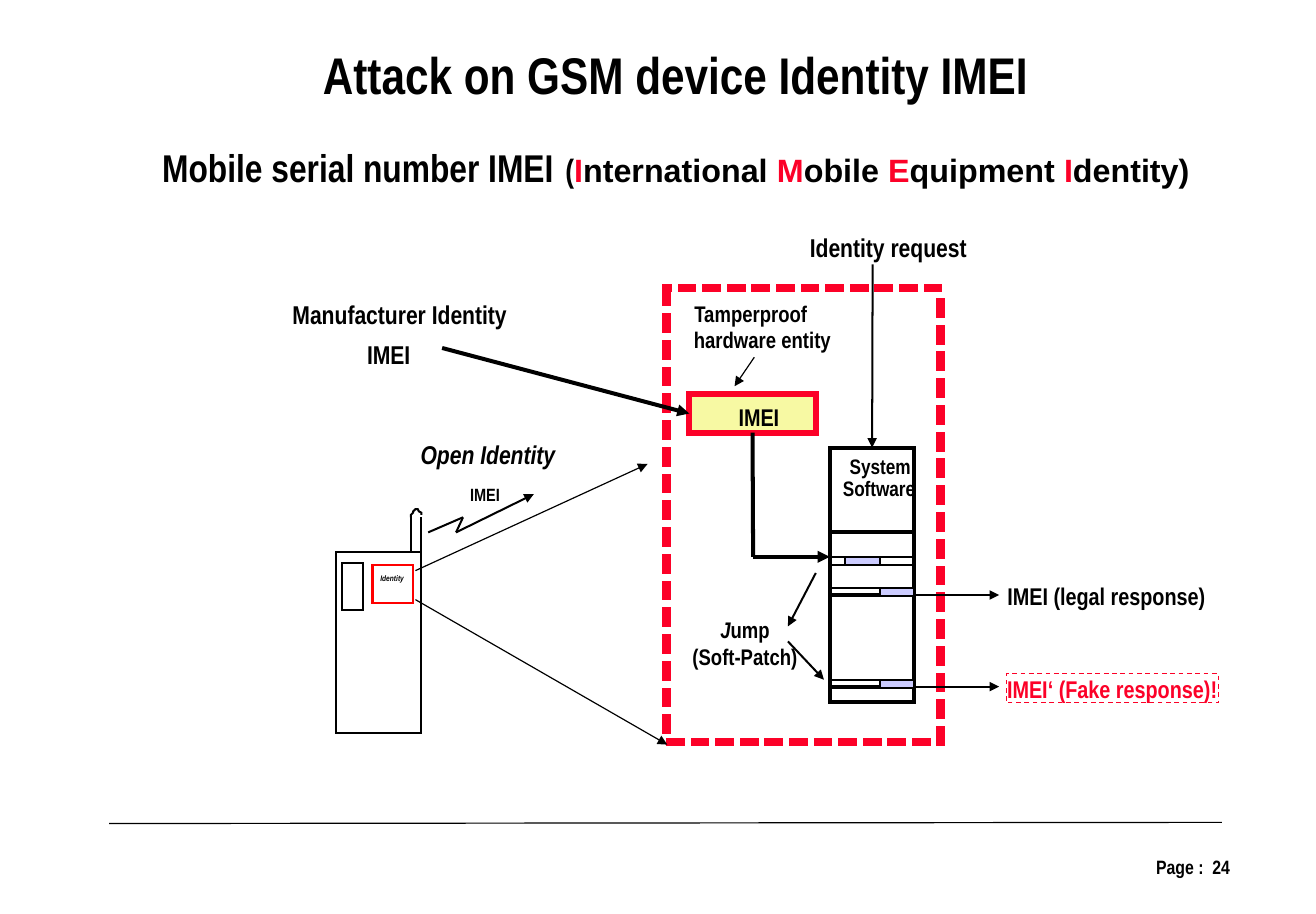
from dataclasses import dataclass
from typing import NamedTuple, Optional

from lxml.etree import SubElement
from pptx import Presentation
from pptx.dml.color import RGBColor
from pptx.enum.dml import MSO_LINE_DASH_STYLE as Dash
from pptx.enum.shapes import MSO_CONNECTOR_TYPE as Link, MSO_SHAPE as Kind
from pptx.enum.text import MSO_AUTO_SIZE as Fit, PP_ALIGN as Align
from pptx.oxml.ns import qn
from pptx.shapes.autoshape import Shape
from pptx.shapes.connector import Connector
from pptx.text.text import TextFrame
from pptx.util import Inches, Pt

BLACK, WHITE, RED = "000000", "FFFFFF", "FC0128"
PURE, YELLOW, LILAC = "FF0000", "F7F9A3", "CCCCFF"
NARROW = "Arial Narrow"

Point = tuple[float, float]


class Run(NamedTuple):
    text: str
    size: float
    color: str = BLACK
    italic: bool = False
    font: str = NARROW


class Box(NamedTuple):
    x: float
    y: float
    w: float
    h: float


@dataclass
class Label:
    box: Box
    rows: list[list[Run]]
    align: Align = Align.CENTER
    wrap: bool = False
    inset: Point = (0, 0)
    gap: float = 0


@dataclass
class Line:
    start: Point
    end: Point
    width: float = 1.25
    head: Optional[str] = None


prs = Presentation()
prs.slide_width, prs.slide_height = Inches(11.34), Inches(7.88)
slide = prs.slides.add_slide(prs.slide_layouts[6])
shapes = slide.shapes


def rgb(code: str) -> RGBColor:
    return RGBColor.from_string(code)


def paint(shape: Shape, fill: Optional[str], line: str, width: float) -> Shape:
    shape.shadow.inherit = False
    if fill:
        shape.fill.solid()
        shape.fill.fore_color.rgb = rgb(fill)
    else:
        shape.fill.background()
    shape.line.color.rgb = rgb(line)
    shape.line.width = Pt(width)
    SubElement(shape.line._get_or_add_ln(), qn("a:miter"), lim="800000")
    return shape


def add_box(box: Box, fill: Optional[str] = None, line: str = BLACK, width: float = 1.25) -> Shape:
    return paint(shapes.add_shape(Kind.RECTANGLE, *map(Inches, box)), fill, line, width)


def add_path(points: list[Point], closed: bool, fill: Optional[str], line: str, width: float) -> Shape:
    first, *rest = [(Inches(x), Inches(y)) for x, y in points]
    pen = shapes.build_freeform(*first)
    pen.add_line_segments(rest, close=closed)
    return paint(pen.convert_to_shape(), fill, line, width)


def add_line(line: Line) -> Connector:
    ends = map(Inches, (*line.start, *line.end))
    link = shapes.add_connector(Link.STRAIGHT, *ends)
    link.line.color.rgb = rgb(BLACK)
    link.line.width = Pt(line.width)
    if line.head:
        SubElement(link.line._get_or_add_ln(), qn("a:tailEnd"), type="triangle", w=line.head, len=line.head)
    SubElement(link._element.spPr, qn("a:effectLst"))
    return link


def fill_text(frame: TextFrame, label: Label) -> None:
    frame.word_wrap = label.wrap
    frame.auto_size = Fit.SHAPE_TO_FIT_TEXT
    frame.margin_left = frame.margin_right = Inches(label.inset[0])
    frame.margin_top = frame.margin_bottom = Inches(label.inset[1])
    for i, row in enumerate(label.rows):
        para = frame.add_paragraph() if i else frame.paragraphs[0]
        para.alignment = label.align
        if i and label.gap:
            para.space_before = Pt(label.gap)
        for item in row:
            run = para.add_run()
            run.text = item.text
            font = run.font
            font.name, font.size = item.font, Pt(item.size)
            font.bold, font.italic = True, item.italic
            font.color.rgb = rgb(item.color)


def add_label(label: Label) -> None:
    fill_text(shapes.add_textbox(*map(Inches, label.box)).text_frame, label)


def add_dashes(start: Point, end: Point, count: int, size: Point) -> None:
    (x0, y0), (x1, y1) = start, end
    for i in range(count):
        part = i / (count - 1)
        add_box(Box(x0 + (x1 - x0) * part, y0 + (y1 - y0) * part, *size), PURE, RED, 3)


# Footer
add_line(Line((0.94, 7.1), (10.53, 7.09), 0.75))
add_label(Label(Box(8.14, 7.31, 2.58, 0.53), [[Run("Page :  24", 12)]], Align.RIGHT, True, (0.12, 0.06)))

# Phone with antenna
add_box(Box(2.95, 4.85, 0.18, 0.41), WHITE)
add_box(Box(2.9, 4.76, 0.73, 1.56))
add_box(Box(3.21, 4.87, 0.35, 0.33), WHITE, PURE)
add_line(Line((3.54, 4.76), (3.54, 4.44)))
add_line(Line((3.63, 4.76), (3.63, 4.46)))
add_path([(3.63, 4.44), (3.63, 4.42), (3.61, 4.41), (3.6, 4.39), (3.58, 4.39), (3.56, 4.41),
          (3.56, 4.42), (3.54, 4.44), (3.54, 4.46)], False, None, BLACK, 1.25)

# Dashed frame of the tamperproof hardware
add_path([(5.73, 2.47), (5.77, 2.47), (5.77, 2.5), (5.76, 2.5), (5.76, 2.62), (5.73, 2.62)], True, PURE, RED, 3)
add_path([(8.09, 6.28), (8.12, 6.28), (8.12, 6.41), (8.09, 6.41)], True, PURE, RED, 3)
TALL, FLAT = (0.03, 0.13), (0.12, 0.03)
add_dashes((5.73, 2.72), (5.73, 6.18), 16, TALL)
add_dashes((8.09, 2.59), (8.09, 6.05), 16, TALL)
add_dashes((5.86, 2.47), (7.98, 2.47), 11, FLAT)
add_dashes((5.76, 6.38), (7.88, 6.38), 11, FLAT)

# Identity store and system software
store = add_box(Box(5.94, 3.4, 1.09, 0.33), YELLOW, RED, 3.75)
LEFT, RIGHT = 7.15, 7.88
system = add_box(Box(LEFT, 3.86, RIGHT - LEFT, 2.19), None, BLACK, 2.5)
for y, width in [(4.59, 2.5), (5.13, 2.5), (5.92, 2.5), (4.8, 1.25), (4.87, 1.25), (5.07, 1.25), (5.86, 1.25)]:
    add_line(Line((LEFT, y), (RIGHT, y), width))
for x, y in [(7.28, 4.8), (7.58, 5.07), (7.58, 5.86)]:
    add_box(Box(x, y, 0.3, 0.07), LILAC)

# Arrows joined to the boxes
add_line(Line((7.52, 2.28), (7.52, 3.86), 1.25, "med")).end_connect(system, 0)
add_line(Line((3.81, 3), (5.94, 3.56), 2.5, "med")).end_connect(store, 1)
add_line(Line((6.49, 3.73), (6.49, 4.8), 2.5)).begin_connect(store, 2)

# Free arrows
for line in [
    Line((6.49, 4.8), (LEFT, 4.8), 2.5, "med"),
    Line((RIGHT, 5.13), (8.61, 5.13), 1.25, "med"),
    Line((RIGHT, 5.92), (8.61, 5.92), 1.25, "med"),
    Line((3.69, 4.59), (3.99, 4.46)),
    Line((3.99, 4.46), (3.93, 4.59)),
    Line((3.93, 4.59), (4.6, 4.26), 1.25, "med"),
    Line((7.03, 4.94), (6.79, 5.4), 1.25, "med"),
    Line((6.79, 5.53), (7.1, 5.86), 1.25, "med"),
    Line((6.5, 3.08), (6.33, 3.33), 0.75, "med"),
    Line((3.58, 4.92), (5.58, 4), 0.75, "med"),
    Line((3.58, 5.17), (5.75, 6.42), 0.75, "med"),
]:
    add_line(line)

# Labels
for box, run in [
    (Box(3.18, 4.94, 0.4, 0.08), Run("Identity", 5, italic=True)),
    (Box(6.24, 3.47, 0.6, 0.25), Run("IMEI", 15)),
    (Box(3.62, 3.78, 1.17, 0.27), Run("Open Identity", 16, italic=True)),
    (Box(5.98, 2.59, 0.98, 0.24), Run("Tamperproof", 14)),
    (Box(5.97, 2.81, 1.2, 0.24), Run("hardware entity", 14)),
    (Box(7.32, 3.91, 0.53, 0.22), Run("System", 13)),
    (Box(7.21, 4.1, 0.73, 0.22), Run("Software", 13)),
    (Box(6.97, 2, 1.37, 0.27), Run("Identity request", 16)),
    (Box(2.51, 2.58, 1.87, 0.27), Run("Manufacturer Identity", 16)),
    (Box(3.05, 2.92, 0.6, 0.27), Run("IMEI", 16)),
    (Box(8.67, 5.01, 1.73, 0.25), Run("IMEI (legal response)", 15)),
    (Box(3.98, 4.17, 0.4, 0.19), Run("IMEI", 11)),
]:
    add_label(Label(box, [[run]]))
add_label(Label(Box(5.96, 5.31, 0.92, 0.47),
                [[Run("J", 14, italic=True), Run("ump", 14)], [Run("(Soft-Patch)", 14)]]))

# Fake response
spot = Box(8.67, 5.81, 1.83, 0.25)
fake = add_box(spot, None, RED, 0.75)
fake.line.dash_style = Dash.DASH
fill_text(fake.text_frame, Label(spot, [[Run("IMEI‘ (Fake response)!", 15, RED)]]))

# Title and spelled-out name
name = [Run("Mobile serial number IMEI", 24), Run(" ", 32), Run("(", 20)]
for cap, rest in [("I", "nternational "), ("M", "obile "), ("E", "quipment "), ("I", "dentity)")]:
    name += [Run(cap, 20, RED, font="Arial"), Run(rest, 20, font="Arial")]
add_label(Label(Box(1.26, 0.32, 9.13, 1.45), [[Run("Attack on GSM device Identity IMEI", 32)], name],
                wrap=True, inset=(0.1, 0.05), gap=16))

prs.save("out.pptx")
